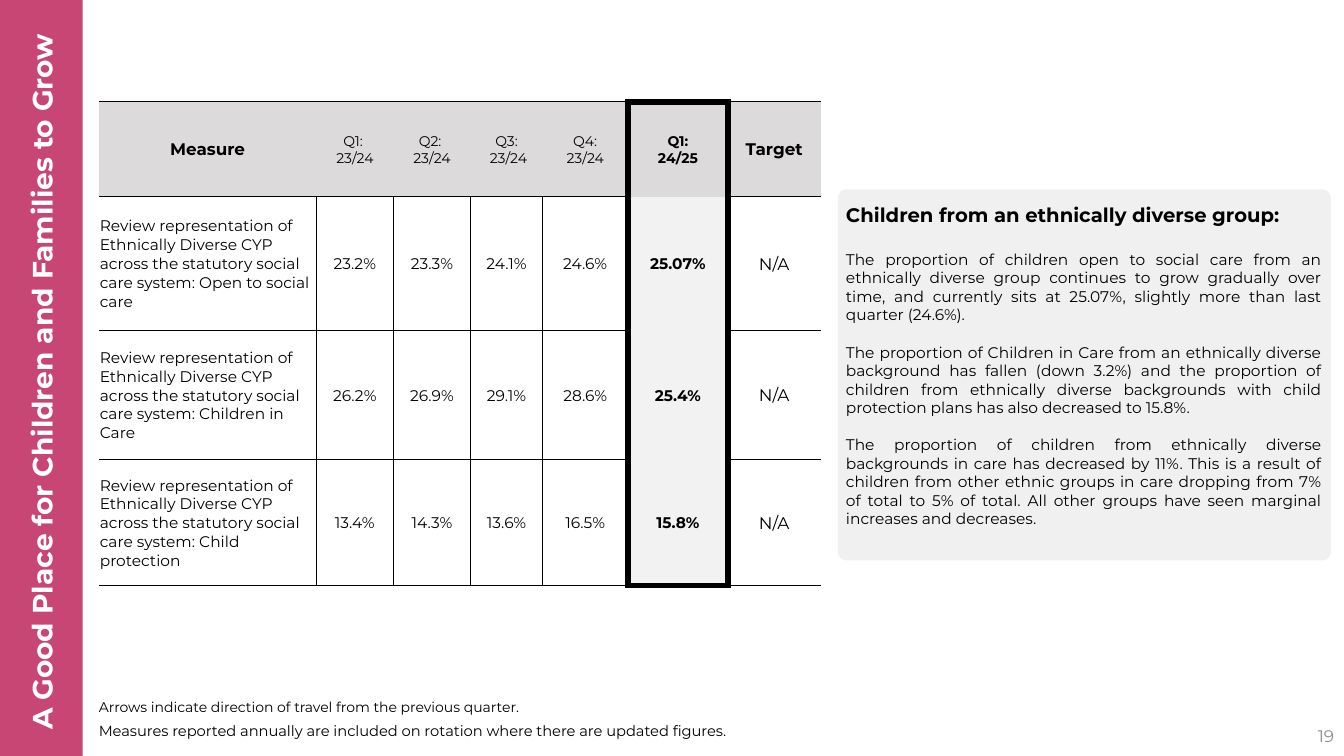
from dataclasses import dataclass
from typing import NamedTuple

from lxml.etree import SubElement
from pptx import Presentation
from pptx.dml.color import RGBColor
from pptx.enum.shapes import MSO_SHAPE
from pptx.enum.text import MSO_ANCHOR, PP_ALIGN
from pptx.oxml.ns import qn
from pptx.util import Emu, Pt

EMU_PER_PX = 9144


@dataclass(frozen=True)
class Theme:
    font: str = "Montserrat"
    black: str = "000000"
    white: str = "FFFFFF"
    banner: str = "C84674"
    panel: str = "D9D9D9"
    panel_alpha: int = 38000
    header: str = "DCDADA"
    highlight: str = "F2F2F2"
    page_number: str = "8C8C8C"
    banner_size: float = 20
    heading_size: float = 14
    label_size: float = 12
    body_size: float = 11
    note_size: float = 10.5
    small_size: float = 10
    thin: float = 1
    thick: float = 4.5


class Box(NamedTuple):
    left: int
    top: int
    width: int
    height: int


class Measure(NamedTuple):
    name: str
    quarters: tuple[str, ...]
    target: str = "N/A"


class Note(NamedTuple):
    text: str
    box: Box
    size: float


THEME = Theme()
COLUMN_WIDTHS = (216, 76, 77, 71, 85, 99, 92)
ROW_HEIGHTS = (94, 133, 128, 125)
CURRENT = 5
TARGET = 6
HEADERS = ("Measure", "Q1: \n23/24", "Q2: \n23/24", "Q3:\n 23/24", "Q4:\n23/24", "Q1:\n24/25", "Target")
MEASURE_PREFIX = "Review representation of Ethnically Diverse CYP across the statutory social care system: "
MEASURES = (
    Measure("Open to social care", ("23.2%", "23.3%", "24.1%", "24.6%", "25.07%")),
    Measure("Children in Care", ("26.2%", "26.9%", "29.1%", "28.6%", "25.4%")),
    Measure("Child protection", ("13.4%", "14.3%", "13.6%", "16.5%", "15.8%")),
)
COMMENTARY = (
    "The proportion of children open to social care from an ethnically diverse group continues to grow "
    "gradually over time, and currently sits at 25.07%, slightly more than last quarter (24.6%).",
    "The proportion of Children in Care from an ethnically diverse background has fallen (down 3.2%) and the "
    "proportion of children from ethnically diverse backgrounds with child protection plans has also "
    "decreased to 15.8%.",
    "The proportion of children from ethnically diverse backgrounds in care has decreased by 11%. This is a "
    "result of children from other ethnic groups in care dropping from 7% of total to 5% of total. All other "
    "groups have seen marginal increases and decreases.",
)
NOTES = (
    Note("Measures reported annually are included on rotation where there are updated figures.",
         Box(98, 716, 633, 34), THEME.note_size),
    Note("Arrows indicate direction of travel from the previous quarter.",
         Box(98, 693, 599, 34), THEME.small_size),
)


def px(length: int) -> Emu:
    return Emu(length * EMU_PER_PX)


def place(box: Box) -> list[Emu]:
    return [px(length) for length in box]


def write_text(frame, text: str, *, size: float, color: str = THEME.black, bold: bool = False,
               align=PP_ALIGN.LEFT, before: float = 0, after: float = 0) -> None:
    for line in text.split("\n"):
        first = frame.paragraphs[0]
        paragraph = frame.add_paragraph() if first.runs else first
        paragraph.alignment = align
        paragraph.space_before = Pt(before)
        paragraph.space_after = Pt(after)
        run = paragraph.add_run()
        run.text = line
        run.font.name = THEME.font
        run.font.size = Pt(size)
        run.font.bold = bold
        run.font.color.rgb = RGBColor.from_string(color)


def prepare_frame(frame, margin: int = 0, anchor=MSO_ANCHOR.TOP):
    frame.word_wrap = True
    frame.vertical_anchor = anchor
    frame.margin_left = frame.margin_right = frame.margin_top = frame.margin_bottom = px(margin)
    return frame


def add_text_box(slide, box: Box, margin: int = 0, anchor=MSO_ANCHOR.TOP):
    return prepare_frame(slide.shapes.add_textbox(*place(box)).text_frame, margin, anchor)


def add_block(slide, kind, box: Box, color: str):
    shape = slide.shapes.add_shape(kind, *place(box))
    shape.shadow.inherit = False
    shape.fill.solid()
    shape.fill.fore_color.rgb = RGBColor.from_string(color)
    shape.line.fill.background()
    return shape


def add_banner(slide) -> None:
    banner = add_block(slide, MSO_SHAPE.RECTANGLE, Box(-334, 334, 750, 82), THEME.banner)
    banner.rotation = 270
    frame = prepare_frame(banner.text_frame, anchor=MSO_ANCHOR.MIDDLE)
    write_text(frame, "A Good Place for Children and Families to Grow ", size=THEME.banner_size,
               color=THEME.white, bold=True, align=PP_ALIGN.CENTER)


def add_commentary(slide) -> None:
    panel = add_block(slide, MSO_SHAPE.ROUNDED_RECTANGLE, Box(831, 188, 489, 368), THEME.panel)
    panel.adjustments[0] = 0.023
    color = panel.element.spPr.find(".//" + qn("a:srgbClr"))
    SubElement(color, qn("a:alpha"), val=str(THEME.panel_alpha))
    frame = add_text_box(slide, Box(839, 201, 472, 390))
    write_text(frame, "Children from an ethnically diverse group:", size=THEME.heading_size, bold=True,
               align=PP_ALIGN.JUSTIFY, after=17)
    for text in COMMENTARY:
        write_text(frame, text, size=THEME.body_size, align=PP_ALIGN.JUSTIFY, after=13.4)


def vertical_width(row: int, edge: int) -> float:
    if edge in (CURRENT, CURRENT + 1):
        return THEME.thick
    return THEME.thin if row and 0 < edge < len(COLUMN_WIDTHS) else 0


def horizontal_width(column: int, edge: int) -> float:
    if column == CURRENT:
        return THEME.thick if edge in (0, len(ROW_HEIGHTS)) else 0
    return THEME.thin


def set_borders(cell, row: int, column: int) -> None:
    widths = {
        "a:lnL": vertical_width(row, column),
        "a:lnR": vertical_width(row, column + 1),
        "a:lnT": horizontal_width(column, row),
        "a:lnB": horizontal_width(column, row + 1),
    }
    properties = cell._tc.get_or_add_tcPr()
    for tag, width in widths.items():
        line = SubElement(properties, qn(tag), w=str(Pt(width)))
        if width:
            SubElement(SubElement(line, qn("a:solidFill")), qn("a:srgbClr"), val=THEME.black)
        else:
            SubElement(line, qn("a:noFill"))


def fill_cell(cell, text: str, row: int, column: int) -> None:
    set_borders(cell, row, column)
    if row == 0 or column == CURRENT:
        cell.fill.solid()
        cell.fill.fore_color.rgb = RGBColor.from_string(THEME.highlight if row else THEME.header)
    else:
        cell.fill.background()
    cell.vertical_anchor = MSO_ANCHOR.MIDDLE
    cell.margin_left = cell.margin_right = cell.margin_top = px(1)
    cell.margin_bottom = 0
    is_label = column == TARGET or (row == 0 and column == 0)
    size = THEME.label_size if is_label else THEME.body_size if row else THEME.small_size
    write_text(cell.text_frame, text, size=size,
               bold=column == CURRENT or (row == 0 and is_label),
               align=PP_ALIGN.LEFT if row and column == 0 else PP_ALIGN.CENTER)


def add_measures(slide) -> None:
    box = Box(98, 101, sum(COLUMN_WIDTHS), sum(ROW_HEIGHTS))
    table = slide.shapes.add_table(len(ROW_HEIGHTS), len(COLUMN_WIDTHS), *place(box)).table
    table.first_row = table.horz_banding = False
    for column, width in zip(table.columns, COLUMN_WIDTHS):
        column.width = px(width)
    for row, height in zip(table.rows, ROW_HEIGHTS):
        row.height = px(height)
    body = [(MEASURE_PREFIX + measure.name, *measure.quarters, measure.target) for measure in MEASURES]
    for row, texts in enumerate([HEADERS, *body]):
        for column, text in enumerate(texts):
            fill_cell(table.cell(row, column), text, row, column)


def main() -> None:
    presentation = Presentation()
    presentation.slide_width, presentation.slide_height = px(1333), px(750)
    slide = presentation.slides.add_slide(presentation.slide_layouts[6])
    number = add_text_box(slide, Box(1033, 710, 300, 40), 10, MSO_ANCHOR.MIDDLE)
    write_text(number, "19", size=THEME.label_size, color=THEME.page_number, align=PP_ALIGN.RIGHT)
    add_banner(slide)
    add_commentary(slide)
    add_measures(slide)
    for note in NOTES:
        write_text(add_text_box(slide, note.box), note.text, size=note.size, before=11.3, after=11.3)
    presentation.save("out.pptx")


if __name__ == "__main__":
    main()
